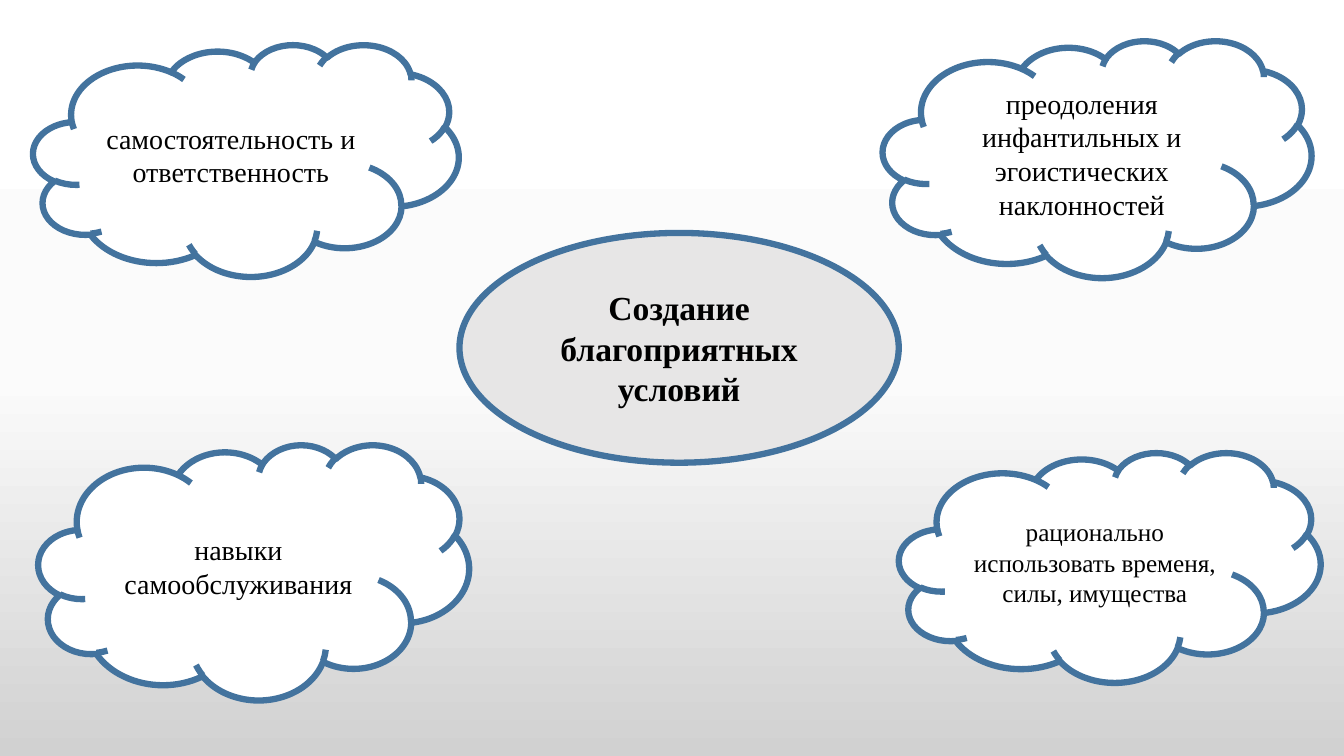
from copy import deepcopy
from dataclasses import dataclass

from pptx import Presentation
from pptx.dml.color import RGBColor
from pptx.enum.shapes import MSO_SHAPE
from pptx.enum.text import MSO_ANCHOR, PP_ALIGN
from pptx.util import Cm, Pt


@dataclass(frozen=True)
class Theme:
    font: str = "Times New Roman"
    text: str = "000000"
    outline: str = "43739E"
    outline_width: float = 4.5
    ellipse_fill: str = "E7E6E6"
    cloud_fill: str = "FFFFFF"
    background: tuple = ((0, "FFFFFF"), (0.5, "FBFBFB"), (1, "D1D1D1"))
    center_size: int = 24
    cloud_size: int = 20
    small_size: int = 18


class SlideBuilder:
    """Draws elements on one slide in the style of a theme."""

    def __init__(self, slide, theme):
        self.s = slide
        self.theme = theme

    def background(self):
        fill = self.s.background.fill
        fill.gradient()
        fill.gradient_angle = 270  # counter-clockwise, so top to bottom
        # python-pptx starts with two stops; the theme needs a middle one
        first = fill._fill._gradFill.gsLst[0]
        first.addnext(deepcopy(first))
        for stop, (position, color) in zip(fill.gradient_stops, self.theme.background):
            stop.position = position
            stop.color.rgb = RGBColor.from_string(color)

    def _bubble(self, kind, box, text, fill, size, bold=False):
        """Add an outlined shape with centred text; box is in centimetres."""
        sp = self.s.shapes.add_shape(kind, *(Cm(v) for v in box))
        sp.shadow.inherit = False
        sp.fill.solid()
        sp.fill.fore_color.rgb = RGBColor.from_string(fill)
        sp.line.color.rgb = RGBColor.from_string(self.theme.outline)
        sp.line.width = Pt(self.theme.outline_width)

        tf = sp.text_frame
        tf.word_wrap = True
        tf.vertical_anchor = MSO_ANCHOR.MIDDLE
        tf.text = text
        p = tf.paragraphs[0]
        p.alignment = PP_ALIGN.CENTER
        font = p.runs[0].font
        font.name = self.theme.font
        font.size = Pt(size)
        font.bold = bold
        font.color.rgb = RGBColor.from_string(self.theme.text)

    def ellipse(self, box, text):
        self._bubble(MSO_SHAPE.OVAL, box, text, self.theme.ellipse_fill,
                     self.theme.center_size, bold=True)

    def cloud(self, box, text, size):
        self._bubble(MSO_SHAPE.CLOUD, box, text, self.theme.cloud_fill, size)


def main():
    theme = Theme()
    prs = Presentation()
    prs.slide_width, prs.slide_height = Cm(33.87), Cm(19.05)
    builder = SlideBuilder(prs.slides.add_slide(prs.slide_layouts[6]), theme)

    builder.background()
    builder.ellipse((11.58, 5.87, 11.07, 5.79), "Создание благоприятных условий")

    clouds = [
        ((22.25, 1.02, 10.8, 5.97),
         "преодоления инфантильных и эгоистических наклонностей", theme.cloud_size),
        ((22.66, 11.4, 10.62, 5.79),
         "рационально использовать временя, силы, имущества", theme.small_size),
        ((0.97, 11.2, 10.85, 6.43), "навыки самообслуживания", theme.cloud_size),
        ((0.84, 1.12, 10.72, 5.84),
         "самостоятельность и ответственность", theme.cloud_size),
    ]
    for box, text, size in clouds:
        builder.cloud(box, text, size)

    prs.save("out.pptx")


if __name__ == "__main__":
    main()
